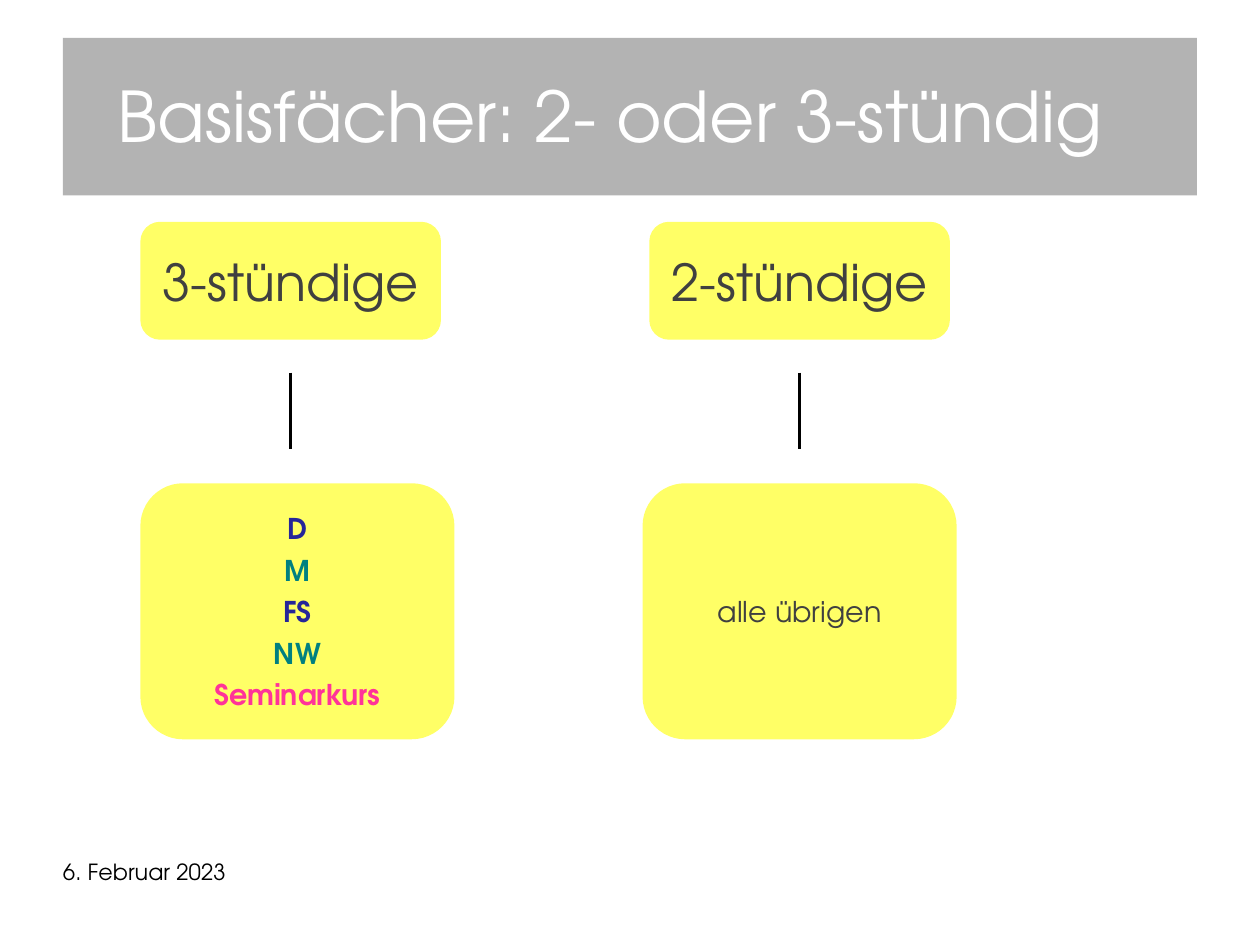
from lxml import etree
from pptx import Presentation
from pptx.dml.color import RGBColor
from pptx.enum.shapes import MSO_CONNECTOR, MSO_SHAPE
from pptx.enum.text import MSO_ANCHOR, MSO_AUTO_SIZE, PP_ALIGN
from pptx.oxml.ns import qn
from pptx.util import Cm, Pt

STRAIGHT = MSO_CONNECTOR.STRAIGHT
ROUNDED = MSO_SHAPE.ROUNDED_RECTANGLE
MIDDLE = MSO_ANCHOR.MIDDLE
NO_AUTOFIT = MSO_AUTO_SIZE.NONE
LEFT, CENTER = PP_ALIGN.LEFT, PP_ALIGN.CENTER

FONT = "TeX Gyre Adventor"
WHITE = RGBColor(0xFF, 0xFF, 0xFF)
BLACK = RGBColor(0x00, 0x00, 0x00)
GREY = RGBColor(0xB3, 0xB3, 0xB3)
DARK_GREY = RGBColor(0x40, 0x40, 0x40)
YELLOW = RGBColor(0xFF, 0xFF, 0x66)
BLUE = RGBColor(0x26, 0x26, 0x99)
TEAL = RGBColor(0x00, 0x80, 0x80)
PINK = RGBColor(0xFF, 0x33, 0x99)

BASIC_SUBJECTS = [("D", BLUE), ("M", TEAL), ("FS", BLUE), ("NW", TEAL),
                  ("Seminarkurs", PINK)]
OTHER_SUBJECTS = [("alle übrigen", DARK_GREY)]


def write(paragraph, text, size, color, alignment, bold=False):
    paragraph.text = text
    paragraph.alignment = alignment
    font = paragraph.font
    font.name, font.size, font.bold = FONT, Pt(size), bold
    font.color.rgb = color


def set_margins(frame, left=0, top=0, right=0, bottom=0):
    frame.margin_left, frame.margin_top = Cm(left), Cm(top)
    frame.margin_right, frame.margin_bottom = Cm(right), Cm(bottom)


def add_title(slide, left, top, width, height):
    title = slide.shapes.title
    title.left, title.top = Cm(left), Cm(top)
    title.width, title.height = Cm(width), Cm(height)
    title.fill.solid()
    title.fill.fore_color.rgb = GREY
    frame = title.text_frame
    frame.auto_size = NO_AUTOFIT
    frame.vertical_anchor = MIDDLE
    set_margins(frame, left=1.22, top=0.1, right=0.5)
    paragraph = frame.paragraphs[0]
    write(paragraph, "Basisfächer: 2- oder 3-stündig", 44, WHITE, LEFT)
    paragraph.line_spacing = 0.93


def add_card(slide, left, top, width, height, lines, size, bold=False):
    card = slide.shapes.add_shape(ROUNDED, Cm(left), Cm(top), Cm(width), Cm(height))
    card.shadow.inherit = False
    card.fill.solid()
    card.fill.fore_color.rgb = YELLOW
    card.line.fill.background()
    frame = card.text_frame
    frame.word_wrap = False
    frame.vertical_anchor = MIDDLE
    set_margins(frame)
    for index, (text, color) in enumerate(lines):
        paragraph = frame.add_paragraph() if index else frame.paragraphs[0]
        write(paragraph, text, size, color, CENTER, bold)
        if index:
            paragraph.space_before = Pt(4.5)


def add_column(slide, left, top, heading, subjects, body_offset=0, bold=False):
    heading_width = 6.68
    add_card(slide, left, top, heading_width, 2.62, [(heading, DARK_GREY)], 32)
    middle = Cm(left + heading_width / 2)
    line = slide.shapes.add_connector(
        STRAIGHT, middle, Cm(top + 3.35), middle, Cm(top + 5.05))
    line.line.color.rgb = BLACK
    line.line.width = Pt(2)
    etree.SubElement(line._element.spPr, qn("a:effectLst"))
    add_card(slide, left + body_offset, top + 5.81, 6.98, 5.69, subjects, 18, bold)


def add_date(slide, left, top, width, height):
    box = slide.shapes.add_textbox(Cm(left), Cm(top), Cm(width), Cm(height))
    frame = box.text_frame
    frame.word_wrap = True
    set_margins(frame)
    paragraph = frame.paragraphs[0]
    write(paragraph, "6. Februar 2023", 14, BLACK, LEFT)
    paragraph.line_spacing = 0.93


def main():
    presentation = Presentation()
    presentation.slide_width, presentation.slide_height = Cm(28), Cm(21)
    slide = presentation.slides.add_slide(presentation.slide_layouts[5])
    add_title(slide, 1.4, 0.84, 25.2, 3.5)
    add_column(slide, 3.12, 4.93, "3-stündige", BASIC_SUBJECTS, bold=True)
    add_column(slide, 14.43, 4.93, "2-stündige", OTHER_SUBJECTS, body_offset=-0.15)
    add_date(slide, 1.4, 19.13, 6.53, 1.45)
    presentation.save("out.pptx")


if __name__ == "__main__":
    main()
